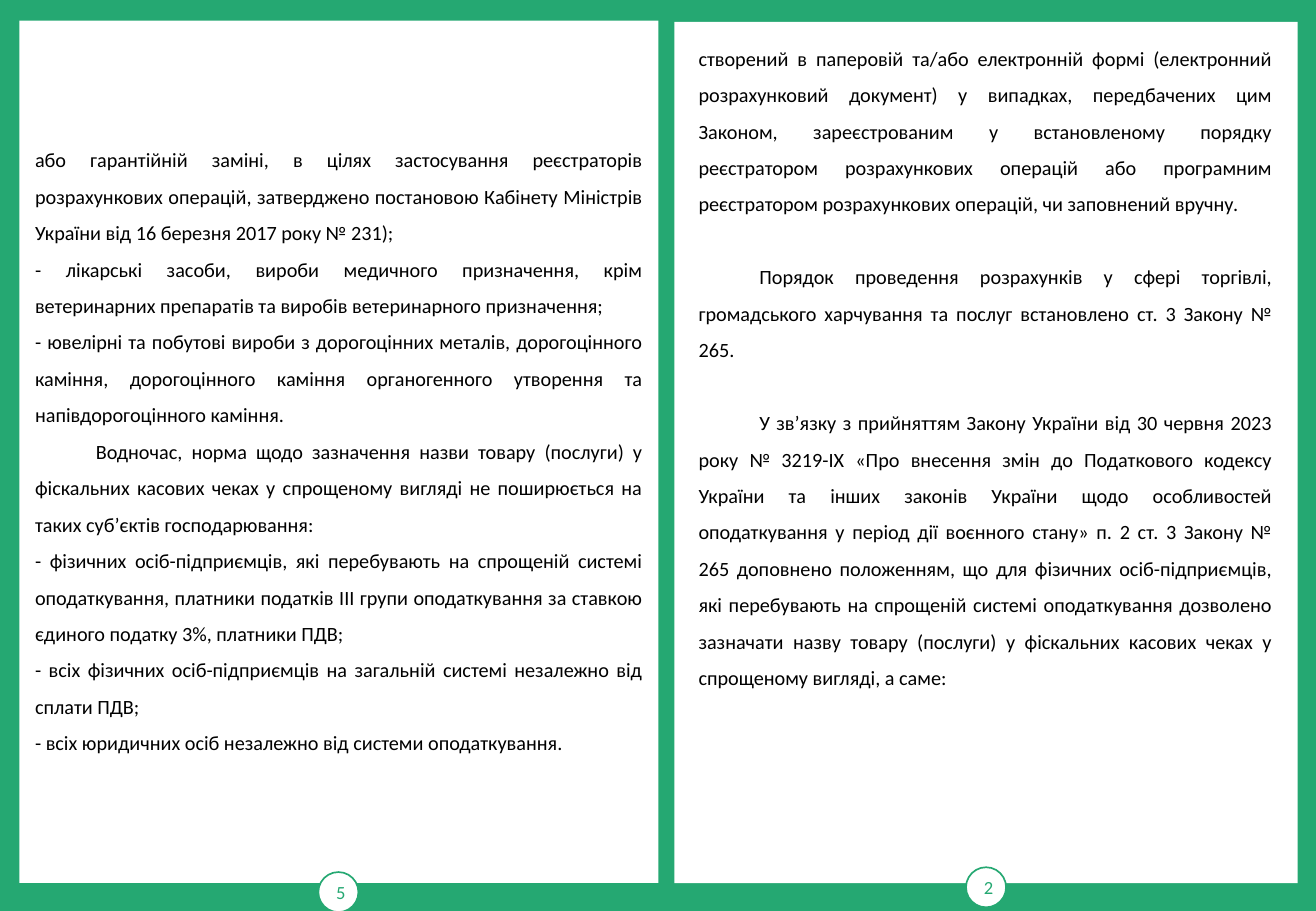
from pptx import Presentation
from pptx.dml.color import RGBColor as Rgb
from pptx.enum.shapes import MSO_SHAPE as Shape
from pptx.enum.text import MSO_ANCHOR as Anchor, MSO_AUTO_SIZE as Fit, PP_ALIGN as Align
from pptx.util import Inches, Pt

HUES = {"green": "25A872", "white": "FFFFFF", "black": "000000"}
GAP = 21.6  # one text line, in points

# Paragraphs: text, then its own format
LEFT = [
    ("або гарантійній заміні, в цілях застосування реєстраторів розрахункових операцій, "
     "затверджено постановою Кабінету Міністрів України від 16 березня 2017 року № 231);", {}),
    ("- лікарські засоби, вироби медичного призначення, крім ветеринарних препаратів "
     "та виробів ветеринарного призначення;", {}),
    ("- ювелірні та побутові вироби з дорогоцінних металів, дорогоцінного каміння, "
     "дорогоцінного каміння органогенного утворення та напівдорогоцінного каміння.", {}),
    ("Водночас, норма щодо зазначення назви товару (послуги) у фіскальних касових чеках "
     "у спрощеному вигляді не поширюється на таких суб’єктів господарювання:",
     {"indent": 0.5}),
    ("- фізичних осіб-підприємців, які перебувають на спрощеній системі оподаткування, "
     "платники податків ІІІ групи оподаткування за ставкою єдиного податку 3%, "
     "платники ПДВ;", {}),
    ("- всіх фізичних осіб-підприємців на загальній системі незалежно від сплати ПДВ;", {}),
    ("- всіх юридичних осіб незалежно від системи оподаткування.", {}),
]
RIGHT = [
    ("створений в паперовій та/або електронній формі (електронний розрахунковий документ) "
     "у випадках, передбачених цим Законом, зареєстрованим у встановленому порядку "
     "реєстратором розрахункових операцій або програмним реєстратором розрахункових "
     "операцій, чи заповнений вручну.", {}),
    ("Порядок проведення розрахунків у сфері торгівлі, громадського харчування та послуг "
     "встановлено ст. 3 Закону № 265.", {"indent": 0.5, "before": GAP}),
    ("У зв’язку з прийняттям Закону України від 30 червня 2023 року № 3219-ІХ "
     "«Про внесення змін до Податкового кодексу України та інших законів України щодо "
     "особливостей оподаткування у період дії воєнного стану» п. 2 ст. 3 Закону № 265 "
     "доповнено положенням, що для фізичних осіб-підприємців, які перебувають на "
     "спрощеній системі оподаткування дозволено зазначати назву товару (послуги) у "
     "фіскальних касових чеках у спрощеному вигляді, а саме:",
     {"indent": 0.5, "before": GAP}),
]


def hue(name):
    return Rgb.from_string(HUES[name])


def write(para, text, size=12, color="black", align=Align.JUSTIFY,
          lead=1.5, indent=0, before=0):
    para.alignment = align
    para.line_spacing = lead
    if before:
        para.space_before = Pt(before)
    if indent:
        props = para._p.get_or_add_pPr()
        props.set("marL", "0")
        props.set("indent", str(Inches(indent)))
    run = para.add_run()
    run.text = text
    run.font.name = "Calibri"
    run.font.size = Pt(size)
    run.font.color.rgb = hue(color)


def draw(group, kind, box, line=None):
    shape = group.shapes.add_shape(kind, *map(Inches, box))
    shape.shadow.inherit = False
    shape.fill.solid()
    shape.fill.fore_color.rgb = hue("white")
    if line:
        shape.line.color.rgb = hue(line)
        shape.line.width = Pt(1)
    else:
        shape.line.fill.background()
    return shape


def add_page(slide, sheet, badge, number):
    group = slide.shapes.add_group_shape()
    draw(group, Shape.RECTANGLE, sheet)
    disc = draw(group, Shape.OVAL, (*badge, 0.33, 0.33), line="green")
    frame = disc.text_frame
    frame.vertical_anchor = Anchor.MIDDLE
    write(frame.paragraphs[0], number, size=11, color="green",
          align=Align.CENTER, lead=1.0)


def add_body(slide, box, paras, anchor=Anchor.TOP):
    frame = slide.shapes.add_textbox(*map(Inches, box)).text_frame
    frame.word_wrap = True
    frame.auto_size = Fit.SHAPE_TO_FIT_TEXT
    frame.vertical_anchor = anchor
    for i, (text, style) in enumerate(paras):
        para = frame.add_paragraph() if i else frame.paragraphs[0]
        write(para, text, **style)


def main():
    deck = Presentation()
    deck.slide_width, deck.slide_height = Inches(10.83), Inches(7.5)
    slide = deck.slides.add_slide(deck.slide_layouts[6])
    slide.background.fill.solid()
    slide.background.fill.fore_color.rgb = hue("green")

    # White pages with numbers
    add_page(slide, (0.16, 0.17, 5.26, 7.1), (2.62, 7.18), "5")
    add_page(slide, (5.55, 0.18, 5.13, 7.09), (7.95, 7.14), "2")

    # Page texts
    add_body(slide, (0.19, 0.15, 5.2, 7.03), LEFT, anchor=Anchor.MIDDLE)
    add_body(slide, (5.65, 0.23, 4.92, 6.77), RIGHT)

    deck.save("out.pptx")


if __name__ == "__main__":
    main()
